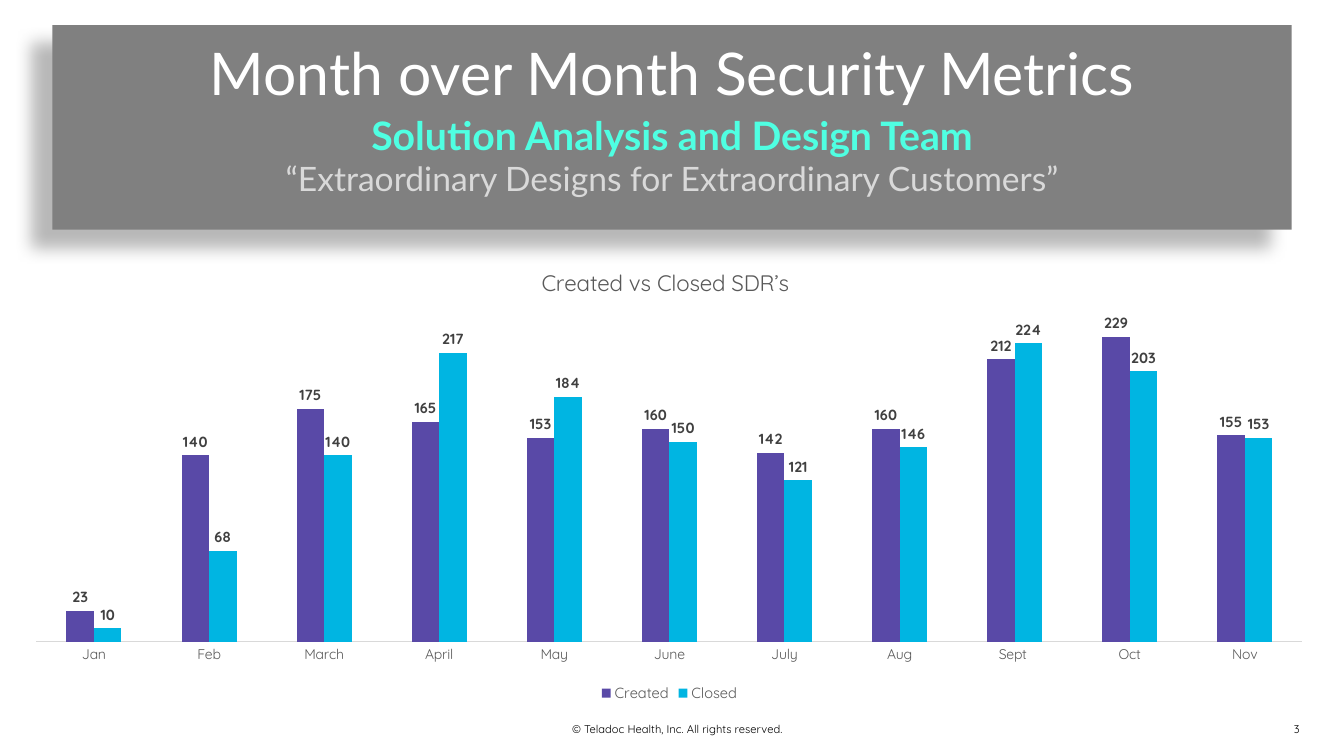
from lxml.etree import SubElement as Sub, Element as Elem
from pptx import Presentation
from pptx.chart.data import CategoryChartData as Data
from pptx.dml.color import RGBColor as RGB
from pptx.enum.chart import XL_CHART_TYPE as Kind, XL_LABEL_POSITION as Spot
from pptx.enum.chart import XL_LEGEND_POSITION as Side, XL_TICK_MARK as Tick
from pptx.enum.shapes import MSO_SHAPE as Shape
from pptx.enum.text import PP_ALIGN as Align
from pptx.oxml.ns import qn
from pptx.util import Inches, Pt

MONTHS = ["Jan", "Feb", "March", "April", "May", "June", "July", "Aug", "Sept ", "Oct", "Nov"]
SERIES = {
    "Created": ("5949A7", [23, 140, 175, 165, 153, 160, 142, 160, 212, 229, 155]),
    "Closed": ("00B5E2", [10, 68, 140, 217, 184, 150, 121, 146, 224, 203, 153]),
}
HEADS = [
    ("Month over Month Security Metrics", 6, {"size": Pt(42), "bold": False}, "FFFFFF"),
    ("Solution Analysis and Design Team", 3, {"size": Pt(28), "bold": True}, "4FFFE2"),
    ("“Extraordinary Designs for Extraordinary Customers”", 3,
     {"size": Pt(24), "bold": False}, "D9D9D9"),
]


def tint(obj, code):
    obj.rgb = RGB.from_string(code)


def fill(obj, code):
    obj.fill.solid()
    tint(obj.fill.fore_color, code)


def style(obj, vals):
    for key, val in vals.items():
        setattr(obj, key, val)


def ink(font, code, **vals):
    style(font, vals)
    tint(font.color, code)


def shade(shape):
    shape.shadow.inherit = False
    glow = Sub(shape._element.spPr.find(qn("a:effectLst")), qn("a:outerShdw"),
               blurRad=str(Pt(11.8)), dist=str(Pt(19.7)), dir=str(141 * 60000),
               algn="ctr", rotWithShape="0")
    tone = Sub(glow, qn("a:srgbClr"), val="000000")
    Sub(tone, qn("a:alpha"), val="28000")


def text(slide, box, inset):
    frame = slide.shapes.add_textbox(*map(Inches, box)).text_frame
    style(frame, {"word_wrap": True})
    if not inset:
        style(frame, dict.fromkeys(
            ["margin_left", "margin_right", "margin_top", "margin_bottom"], 0))
    return frame


def banner(slide, box):
    left, top, width, height = box
    panel = slide.shapes.add_shape(Shape.RECTANGLE, *map(Inches, box))
    fill(panel, "808080")
    panel.line.fill.background()
    shade(panel)
    frame = text(slide, (0, top + 0.14, 2 * left + width, height - 0.22), True)
    for num, (words, after, vals, code) in enumerate(HEADS):
        para = frame.add_paragraph() if num else frame.paragraphs[0]
        style(para, {"alignment": Align.CENTER, "line_spacing": 0.9, "space_after": Pt(after)})
        run = para.add_run()
        run.text = words
        ink(run.font, code, name="Lato", **vals)


def place(node, index, **vals):
    for old in node.findall(qn("c:layout")):
        node.remove(old)
    area = Elem(qn("c:layout"))
    node.insert(index, area)
    manual = Sub(area, qn("c:manualLayout"))
    for key, val in vals.items():
        Sub(manual, qn("c:" + key), val=str(val))


def graph(slide, box):
    data = Data()
    data.categories = MONTHS
    for name, (_, vals) in SERIES.items():
        data.add_series(name, vals)
    chart = slide.shapes.add_chart(Kind.COLUMN_CLUSTERED, *map(Inches, box), data).chart
    ink(chart.font, "000000", name="Quicksand", size=Pt(10))

    head = chart.chart_title
    head.include_text_frame = True
    run = head.text_frame.paragraphs[0].add_run()
    run.text = "Created vs Closed SDR’s"
    ink(run.font, "595959", name="Quicksand", size=Pt(16), bold=False)
    place(head._element, 1, xMode="edge", yMode="edge", x=0.4, y=0.04)
    place(chart._chartSpace.chart.plotArea, 0, layoutTarget="inner", xMode="edge",
          yMode="edge", x=0.02, y=0.14, w=0.96, h=0.72)

    chart.has_legend = True
    style(chart.legend, {"position": Side.BOTTOM, "include_in_layout": False})
    ink(chart.legend.font, "595959", name="Quicksand", size=Pt(10.5))

    style(chart.value_axis, {"visible": False, "has_major_gridlines": False,
                             "minimum_scale": 0, "maximum_scale": 250})
    axis = chart.category_axis
    style(axis, {"major_tick_mark": Tick.NONE, "minor_tick_mark": Tick.NONE})
    ink(axis.tick_labels.font, "595959", name="Quicksand", size=Pt(10))
    tint(axis.format.line.color, "D9D9D9")
    axis.format.line.width = Pt(0.75)

    plot = chart.plots[0]
    style(plot, {"gap_width": 219, "overlap": 0, "vary_by_categories": False})
    for row, (code, _) in zip(plot.series, SERIES.values()):
        fill(row.format, code)
        style(row.data_labels, {"show_value": True, "position": Spot.OUTSIDE_END})
        ink(row.data_labels.font, "404040", name="Quicksand", size=Pt(10.5), bold=True)


def foot(slide, box, words, align):
    para = text(slide, box, False).paragraphs[0]
    para.alignment = align
    run = para.add_run()
    run.text = words
    ink(run.font, "000000", name="Quicksand", size=Pt(8))


def main():
    deck = Presentation()
    style(deck, {"slide_width": Inches(13.33), "slide_height": Inches(7.5)})
    slide = deck.slides.add_slide(deck.slide_layouts[6])
    foot(slide, (12.44, 7.17, 0.45, 0.13), "3", Align.RIGHT)
    foot(slide, (4.99, 7.17, 3.49, 0.13),
         "© Teladoc Health, Inc. All rights reserved. ", Align.CENTER)
    graph(slide, (0.1, 2.42, 13.08, 4.59))
    banner(slide, (0.52, 0.25, 12.29, 2.03))
    deck.save("out.pptx")


if __name__ == "__main__":
    main()
